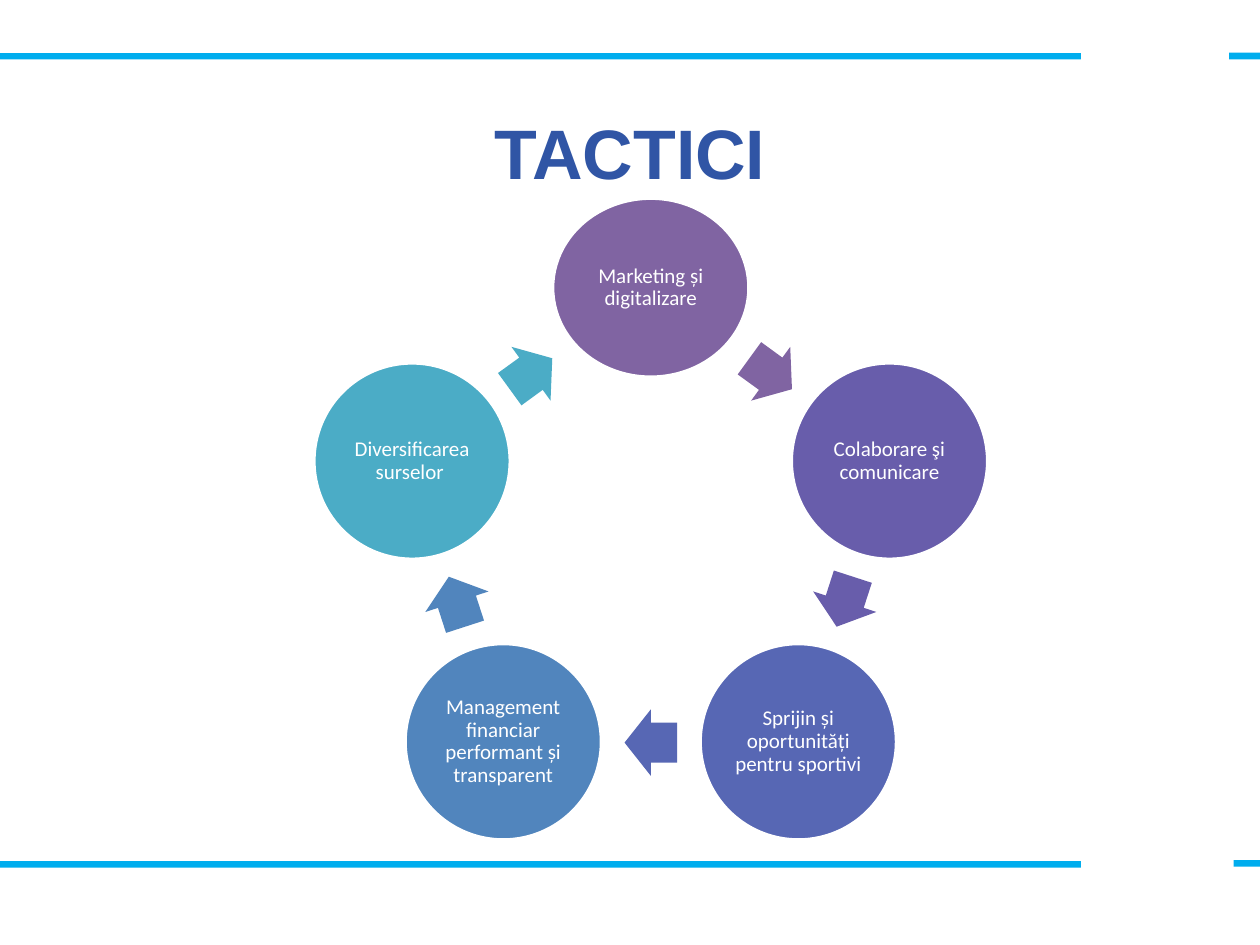
from math import cos, radians, sin

from pptx import Presentation
from pptx.dml.color import RGBColor
from pptx.enum.shapes import MSO_SHAPE
from pptx.enum.text import MSO_ANCHOR, PP_ALIGN
from pptx.util import Cm, Pt

RECT, OVAL, ARROW = MSO_SHAPE.RECTANGLE, MSO_SHAPE.OVAL, MSO_SHAPE.RIGHT_ARROW
MIDDLE, CENTER = MSO_ANCHOR.MIDDLE, PP_ALIGN.CENTER

# Content: the cycle runs clockwise from the top
TITLE = "TACTICI "
TACTICS = [
    ("Marketing și digitalizare", "8064A2"),
    ("Colaborare şi comunicare", "685DAB"),
    ("Sprijin și oportunități pentru sportivi", "5767B4"),
    ("Management financiar performant și transparent", "5185BD"),
    ("Diversificarea surselor ", "4BACC6"),
]

THEME = {
    "bar": "00ADEE",
    "outline": "FFFFFF",
    "title": {"name": "Arial", "size": Pt(40), "bold": True, "color": "3055A5"},
    "label": {"name": "Calibri", "size": Pt(12), "bold": False, "color": "FFFFFF"},
}

# Geometry in centimetres
SLIDE_W, SLIDE_H = 25.4, 19.05
BARS = [  # left, top, width, height
    (0, 1.07, 21.79, 0.13),
    (24.78, 1.06, 0.62, 0.14),
    (0, 17.36, 21.79, 0.13),
    (24.87, 17.34, 0.53, 0.13),
]
TITLE_BOX = (1.47, 1.47, 22.86, 3.18)
CENTER_X, CENTER_Y = 13.12, 10.86
CIRCLE_RING, ARROW_RING = 5.06, 4.11
CIRCLE, TOP_CIRCLE_H = 3.96, 3.61
ARROW_W, ARROW_H = 1.06, 1.34
STEP = 360 / len(TACTICS)


def add_shape(slide, kind, box, color, outline=None):
    s = slide.shapes.add_shape(kind, *map(Cm, box))
    s.shadow.inherit = False
    s.fill.solid()
    s.fill.fore_color.rgb = RGBColor.from_string(color)
    if outline:
        s.line.color.rgb = RGBColor.from_string(outline)
        s.line.width = Pt(2)
    else:
        s.line.fill.background()
    return s


def write(s, text, style, inset, spacing=1.0):
    tf = s.text_frame
    frame = {"word_wrap": True, "vertical_anchor": MIDDLE}
    for side in ("left", "top", "right", "bottom"):
        frame[f"margin_{side}"] = Cm(inset)
    for name, value in frame.items():
        setattr(tf, name, value)
    p = tf.paragraphs[0]
    p.alignment, p.line_spacing = CENTER, spacing
    r = p.add_run()
    r.text = text
    for name in ("name", "size", "bold"):
        setattr(r.font, name, style[name])
    r.font.color.rgb = RGBColor.from_string(style["color"])


def ring_box(angle, radius, width, height):
    """Box centred on a ring, at an angle clockwise from the top."""
    x = CENTER_X + radius * sin(radians(angle))
    y = CENTER_Y - radius * cos(radians(angle))
    return x - width / 2, y - height / 2, width, height


def main():
    prs = Presentation()
    prs.slide_width, prs.slide_height = Cm(SLIDE_W), Cm(SLIDE_H)
    slide = prs.slides.add_slide(prs.slide_layouts[6])

    # Frame bars
    for bar in BARS:
        add_shape(slide, RECT, bar, THEME["bar"])

    # Title
    write(slide.shapes.add_textbox(*map(Cm, TITLE_BOX)), TITLE, THEME["title"], 0.2)

    # Cycle of circles, each followed by an arrow to the next
    for i, (text, color) in enumerate(TACTICS):
        angle = i * STEP
        height = CIRCLE if i else TOP_CIRCLE_H
        box = ring_box(angle, CIRCLE_RING, CIRCLE, height)
        s = add_shape(slide, OVAL, box, color, THEME["outline"])
        write(s, text, THEME["label"], 0.04, 0.9)

        turn = angle + STEP / 2
        box = ring_box(turn, ARROW_RING, ARROW_W, ARROW_H)
        arrow = add_shape(slide, ARROW, box, color)
        arrow.adjustments[0], arrow.adjustments[1] = 0.6, 0.5
        arrow.rotation = turn

    prs.save("out.pptx")


if __name__ == "__main__":
    main()
